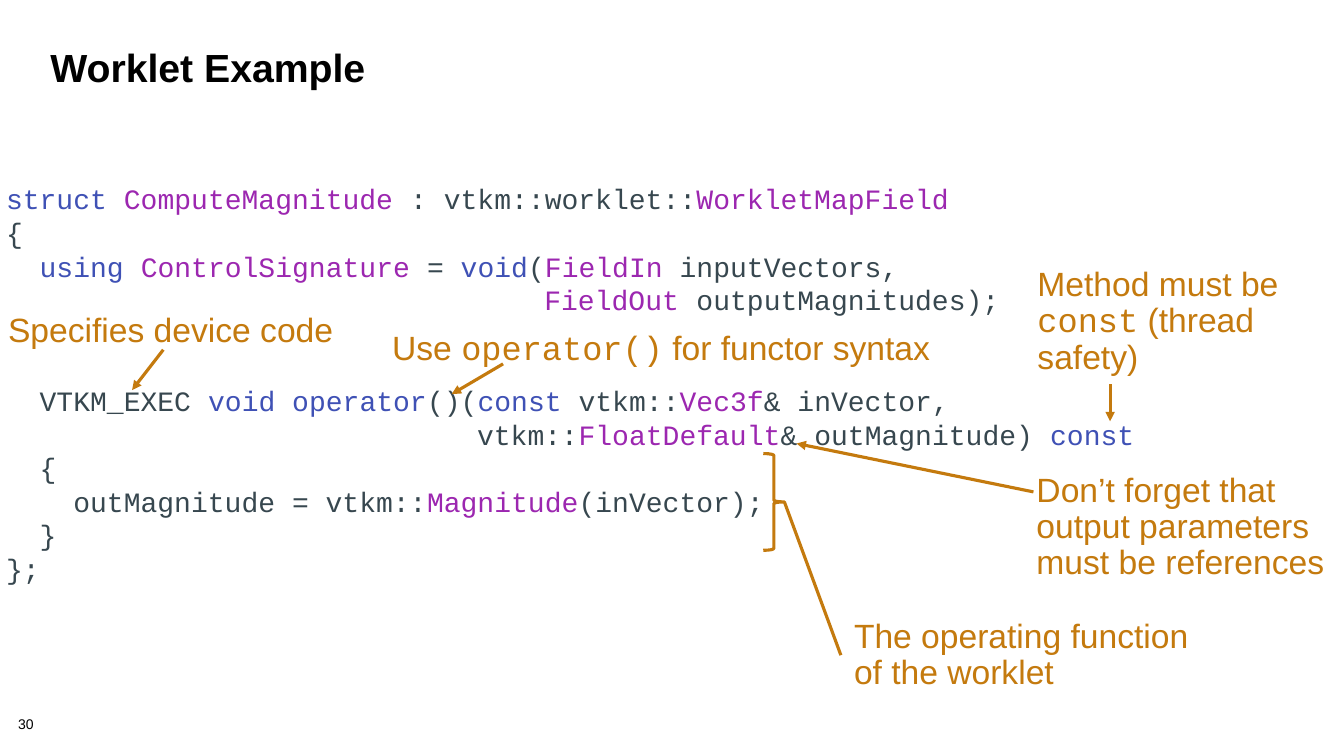
from pptx import Presentation
from pptx import util as u
from pptx.dml.color import RGBColor
from pptx.enum import shapes, text
from pptx.oxml.ns import qn
from lxml import etree

PX = 9144  # EMU per px, 100 px to the inch
BLACK, ORANGE = "000000", "C47A0E"
KEYWORD, NAME, PLAIN = "3F51B5", "9C27B0", "37474F"
SANS, MONO = "Arial", "Courier New"

# Each code line is a list of (text, colour); None marks the gap before the method
CODE = [
    [("struct ", KEYWORD), ("ComputeMagnitude", NAME),
     (" : vtkm::worklet::", PLAIN), ("WorkletMapField", NAME)],
    [("{", PLAIN)],
    [("  using ", KEYWORD), ("ControlSignature", NAME), (" = ", PLAIN),
     ("void", KEYWORD), ("(", PLAIN), ("FieldIn ", NAME), ("inputVectors,", PLAIN)],
    [("                                FieldOut ", NAME), ("outputMagnitudes);", PLAIN)],
    None,
    [("  VTKM_EXEC ", PLAIN), ("void operator", KEYWORD), ("()(", PLAIN),
     ("const ", KEYWORD), ("vtkm::", PLAIN), ("Vec3f", NAME), ("& inVector,", PLAIN)],
    [("                            vtkm::", PLAIN), ("FloatDefault", NAME),
     ("& outMagnitude) ", PLAIN), ("const", KEYWORD)],
    [("  {", PLAIN)],
    [("    outMagnitude = vtkm::", PLAIN), ("Magnitude", NAME), ("(inVector);", PLAIN)],
    [("  }", PLAIN)],
    [("};", PLAIN)],
]

# Notes: box, then (text, font) pieces
NOTES = [
    ((1015, 459, 318, 129),
     [("Don’t forget that output parameters must be references", SANS)]),
    ((834, 604, 382, 93), [("The operating function of the worklet", SANS)]),
    ((376, 318, 603, 57),
     [("Use ", SANS), ("operator()", MONO), (" for functor syntax", SANS)]),
    ((1016, 255, 268, 129),
     [("Method must be ", SANS), ("const", MONO), (" (thread safety)", SANS)]),
    ((-5, 300, 381, 57), [("Specifies device code", SANS)]),
]
ARROWS = [(1025, 488, 790, 440), (499, 361, 448, 391),
          (1101, 381, 1101, 418), (162, 347, 131, 387)]


def px(*lengths):
    return [u.Emu(n * PX) for n in lengths]


def rgb(value):
    return RGBColor.from_string(value)


def add_run(p, words, size=24, font=SANS, color=ORANGE, bold=False):
    r = p.add_run()
    r.text = words
    r.font.size = u.Pt(size)
    r.font.name = font
    r.font.bold = bold
    r.font.color.rgb = rgb(color)


def add_box(s, box, inset=(0, 0), anchor=text.MSO_ANCHOR.MIDDLE):
    tf = s.shapes.add_textbox(*px(*box)).text_frame
    tf.word_wrap = True
    tf.vertical_anchor = anchor
    tf.margin_left = tf.margin_right = px(inset[0])[0]
    tf.margin_top = tf.margin_bottom = px(inset[1])[0]
    return tf


def add_title(s, words):
    sp = s.shapes.title
    sp.left, sp.top, sp.width, sp.height = px(40, 45, 1244, 100)
    tf = sp.text_frame
    tf.auto_size = text.MSO_AUTO_SIZE.NONE
    tf.vertical_anchor = text.MSO_ANCHOR.TOP
    p = tf.paragraphs[0]
    p.alignment = text.PP_ALIGN.LEFT
    p.line_spacing = 0.85
    add_run(p, words, size=28, color=BLACK, bold=True)


def add_code(s, box, lines):
    tf = add_box(s, box, inset=(6, 6))
    p, gap = tf.paragraphs[0], 0
    for i, line in enumerate(lines):
        if line is None:
            gap = 48  # two lines
            continue
        if i:
            p = tf.add_paragraph()
        p.line_spacing = u.Pt(24)
        p.space_before = u.Pt(gap)
        gap = 0
        for words, color in line:
            add_run(p, words, size=20, font=MONO, color=color)


def add_note(s, box, pieces):
    p = add_box(s, box, inset=(13, 10)).paragraphs[0]
    p.line_spacing = 0.9
    for words, font in pieces:
        add_run(p, words, font=font)


def style_line(shape):
    shape.line.color.rgb = rgb(ORANGE)
    shape.line.width = u.Pt(2.25)


def add_line(s, ends, arrow=False):
    line = s.shapes.add_connector(shapes.MSO_CONNECTOR.STRAIGHT, *px(*ends))
    style_line(line)
    if arrow:
        etree.SubElement(line.line._get_or_add_ln(), qn("a:tailEnd"), type="triangle")
    etree.SubElement(line._element.spPr, qn("a:effectLst"))


def add_brace(s, box):
    sp = s.shapes.add_shape(shapes.MSO_SHAPE.RIGHT_BRACE, *px(*box))
    sp.shadow.inherit = False
    sp.fill.background()
    style_line(sp)


def main():
    prs = Presentation()
    prs.slide_width, prs.slide_height = px(1333, 750)
    s = prs.slides.add_slide(prs.slide_layouts[5])

    # Title and page number
    add_title(s, "Worklet Example")
    number = add_box(s, (18, 712, 56, 16), anchor=text.MSO_ANCHOR.TOP)
    number.paragraphs[0].line_spacing = 0.9
    add_run(number.paragraphs[0], "30", size=10, color=BLACK)

    # Code and its notes
    add_code(s, (0, 173, 1139, 415), CODE)
    for box, pieces in NOTES:
        add_note(s, box, pieces)

    # Pointers from the notes to the code
    for ends in ARROWS:
        add_line(s, ends, arrow=True)
    add_brace(s, (757, 450, 21, 96))
    add_line(s, (834, 650, 778, 498))

    prs.save("out.pptx")


if __name__ == "__main__":
    main()
